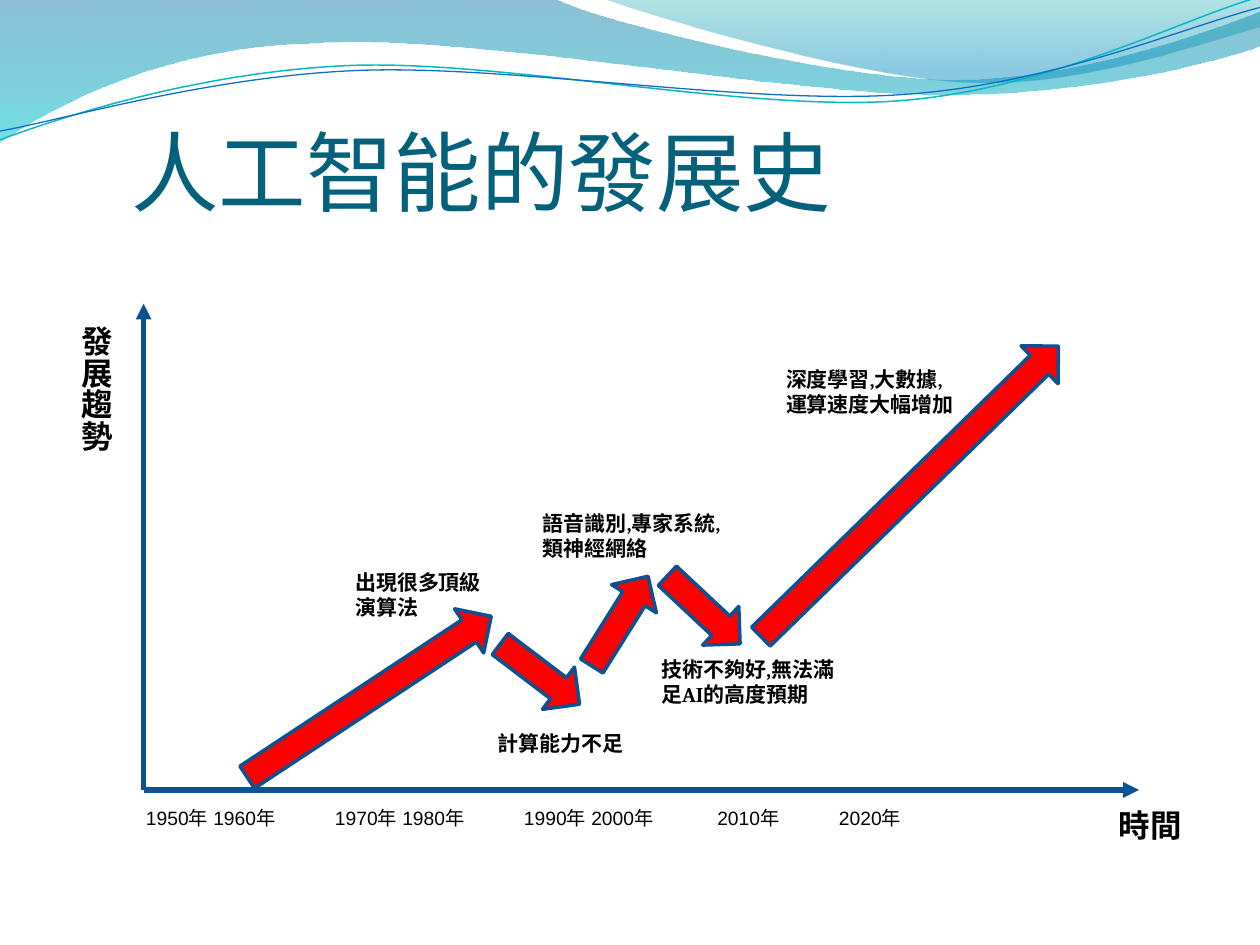
from math import cos, radians, sin

from lxml.etree import SubElement
from pptx import Presentation
from pptx.dml.color import RGBColor
from pptx.enum.shapes import MSO_CONNECTOR as CONN, MSO_SHAPE as SHAPE
from pptx.enum.text import MSO_ANCHOR as ANCHOR, MSO_AUTO_SIZE as AUTO, PP_ALIGN as ALIGN
from pptx.oxml.ns import qn
from pptx.util import Inches, Pt

THEME = {
    "title": {"size": 50, "name": "Calibri", "color": "04617B", "bold": False},
    "years": {"size": 11, "name": "Arial", "color": "000000", "bold": False},
    "axis": {"size": 18, "name": "Cambria", "color": "000000", "bold": True},
    "note": {"size": 12, "name": "Cambria", "color": "000000", "bold": True},
    "axis_line": ("095295", 3),
    "arrow_line": ("0B5292", 2),
    "arrow_fill": "FF0000",
    "deep_wave": [(0, "0074A1", 45), (1, "00C6CF", 55)],
    "light_wave": [(0, "00A1A9", 30), (0.8, "008BBF", 45)],
    "teal_line": ("0AB8BF", 0.85),
    "blue_line": ("0F6FC6", 0.75),
}

TITLE = ("人工智能的發展史", (1.04, 0.52, 8.53, 1.25))
YEARS = ["1950年", " 1960年", "1970年", " 1980年", "1990年", " 2000年", " 2010年", "2020年", ""]
ORIGIN = (1.14, 6.27)
AXIS_TIPS = [(1.14, 2.41), (9.04, 6.27)]

LABELS = [
    ("\t".join(YEARS), "years", (1.06, 6.35, 8.69, 0.29), "horz"),
    ("發展趨勢", "axis", (0.46, 2.49, 0.5, 2.68), "eaVert"),
    ("時間", "axis", (8.78, 6.35, 1.02, 0.4), "horz"),
    ("出現很多頂級演算法", "note", (2.72, 4.47, 1.3, 0.5), "horz"),
    ("計算能力不足", "note", (3.85, 5.75, 1.42, 0.3), "horz"),
    ("技術不夠好,無法滿足AI的高度預期", "note", (5.15, 5.16, 1.57, 0.5), "horz"),
    ("語音識別,專家系統,類神經網絡", "note", (4.21, 4, 1.58, 0.5), "horz"),
    ("深度學習,大數據,運算速度大幅增加", "note", (6.14, 2.86, 1.57, 0.5), "horz"),
]

ARROW_HEIGHT = 0.42
TREND_ARROWS = [
    (1.77, 5.32, 2.32, 326.6),
    (3.89, 5.14, 0.79, 37.2),
    (4.5, 4.72, 0.84, 302.1),
    (5.19, 4.63, 0.79, 43.1),
    (5.57, 3.69, 3.3, 315.7),
]

FILLED_WAVES = [
    ("deep_wave", (0, 0), [
        [(4.4, -0.01)],
        [(4.76, 0.17), (6.64, 0.63), (7.58, 0.63)],
        [(8.53, 0.63), (9.58, 0.26), (10, 0.09)],
        [(10.01, 0.36)],
        [(9.83, 0.44), (8.7, 0.76), (7.46, 0.75)],
        [(6.22, 0.75), (3.82, 0.28), (2.57, 0.34)],
        [(1.29, 0.36), (0.46, 0.83), (-0.01, 1.13)],
        [(0, 0)]]),
    ("light_wave", (4.79, -0.01), [
        [(5.09, 0.11), (6.82, 0.62), (7.69, 0.65)],
        [(8.56, 0.69), (9.61, 0.32), (10, 0.21)],
        [(10, 0)],
        [(4.79, -0.01)]]),
]
WAVE_TILT = 357.3
LINE_WAVES = [
    ("teal_line", (4.99, 0.58), (0, 1.11), [
        [(0.48, 0.93), (1.58, 0.57), (2.77, 0.52)],
        [(3.95, 0.47), (5.93, 0.89), (7.13, 0.8)],
        [(8.33, 0.71), (9.38, 0.15), (9.98, -0.02)]]),
    ("blue_line", (5, 0.59), (0, 1.04), [
        [(0.47, 0.96), (1.64, 0.61), (2.83, 0.56)],
        [(4.03, 0.51), (5.97, 0.84), (7.17, 0.75)],
        [(8.36, 0.67), (9.41, 0.21), (10, 0.06)]]),
]


def inches(values):
    return [Inches(v) for v in values]


def set_line(line, style):
    color, width = style
    line.color.rgb = RGBColor.from_string(color)
    line.width = Pt(width)


def write(sp, text, style):
    r = sp.text_frame.paragraphs[0].add_run()
    r.text = text
    fmt = THEME[style]
    for key, value in {"name": fmt["name"], "size": Pt(fmt["size"]), "bold": fmt["bold"]}.items():
        setattr(r.font, key, value)
    r.font.color.rgb = RGBColor.from_string(fmt["color"])


def turn(point, center, degrees):
    a = radians(degrees)
    dx, dy = point[0] - center[0], point[1] - center[1]
    return center[0] + dx * cos(a) - dy * sin(a), center[1] + dx * sin(a) + dy * cos(a)


def add_curve(shapes, start, segments, close):
    builder = shapes.build_freeform(*inches(start))
    builder.add_line_segments([inches(p) for s in segments for p in s], close=close)
    sp = builder.convert_to_shape()
    sp.shadow.inherit = False
    steps = iter(list(sp._element.spPr.iter(qn("a:lnTo"))))
    for segment in segments:
        first, *others = [next(steps) for _ in segment]
        if others:
            first.tag = qn("a:cubicBezTo")
        for step in others:
            first.append(step[0])
            step.getparent().remove(step)
    return sp


def add_filled_wave(shapes, style, start, segments):
    sp = add_curve(shapes, start, segments, True)
    sp.line.fill.background()
    sp.fill.gradient()
    sp.fill.gradient_angle = 270
    for stop, (position, color, _) in zip(sp.fill.gradient_stops, THEME[style]):
        stop.position = position
        stop.color.rgb = RGBColor.from_string(color)
    for rgb, (_, _, alpha) in zip(sp._element.spPr.iter(qn("a:srgbClr")), THEME[style]):
        SubElement(rgb, qn("a:alpha"), val=str(alpha * 1000))


def add_line_wave(shapes, style, center, start, segments):
    level = [[turn(p, center, -WAVE_TILT) for p in s] for s in segments]
    sp = add_curve(shapes, turn(start, center, -WAVE_TILT), level, False)
    sp.rotation = WAVE_TILT
    sp.fill.background()
    set_line(sp.line, THEME[style])


def add_axis(shapes, tip):
    axis = shapes.add_connector(CONN.STRAIGHT, *inches(tip + ORIGIN))
    set_line(axis.line, THEME["axis_line"])
    SubElement(axis.line._get_or_add_ln(), qn("a:headEnd"), type="triangle")
    SubElement(axis._element.spPr, qn("a:effectLst"))


def add_label(shapes, text, style, box, direction):
    sp = shapes.add_textbox(*inches(box))
    tf = sp.text_frame
    tf.word_wrap = True
    tf.auto_size = AUTO.SHAPE_TO_FIT_TEXT
    tf._txBody.bodyPr.set("vert", direction)
    write(sp, text, style)


def add_trend_arrow(shapes, left, top, width, angle):
    sp = shapes.add_shape(SHAPE.RIGHT_ARROW, *inches((left, top, width, ARROW_HEIGHT)))
    sp.rotation = angle
    sp.shadow.inherit = False
    sp.fill.solid()
    sp.fill.fore_color.rgb = RGBColor.from_string(THEME["arrow_fill"])
    set_line(sp.line, THEME["arrow_line"])


def place_title(shapes):
    text, box = TITLE
    sp = shapes.title
    shapes._spTree.append(sp._element)
    for key, value in zip(("left", "top", "width", "height"), inches(box)):
        setattr(sp, key, value)
    tf = sp.text_frame
    frame = {"margin_left": 0, "margin_right": 0, "margin_top": Inches(0.05), "margin_bottom": 0,
             "vertical_anchor": ANCHOR.BOTTOM, "word_wrap": True, "auto_size": AUTO.NONE}
    for key, value in frame.items():
        setattr(tf, key, value)
    tf.paragraphs[0].alignment = ALIGN.LEFT
    write(sp, text, "title")


def main():
    prs = Presentation()
    prs.slide_width, prs.slide_height = inches((10, 7.5))
    shapes = prs.slides.add_slide(prs.slide_layouts[5]).shapes
    for wave in FILLED_WAVES:
        add_filled_wave(shapes, *wave)
    for wave in LINE_WAVES:
        add_line_wave(shapes, *wave)
    place_title(shapes)
    for tip in AXIS_TIPS:
        add_axis(shapes, tip)
    for label in LABELS:
        add_label(shapes, *label)
    for arrow in TREND_ARROWS:
        add_trend_arrow(shapes, *arrow)
    prs.save("out.pptx")


if __name__ == "__main__":
    main()
